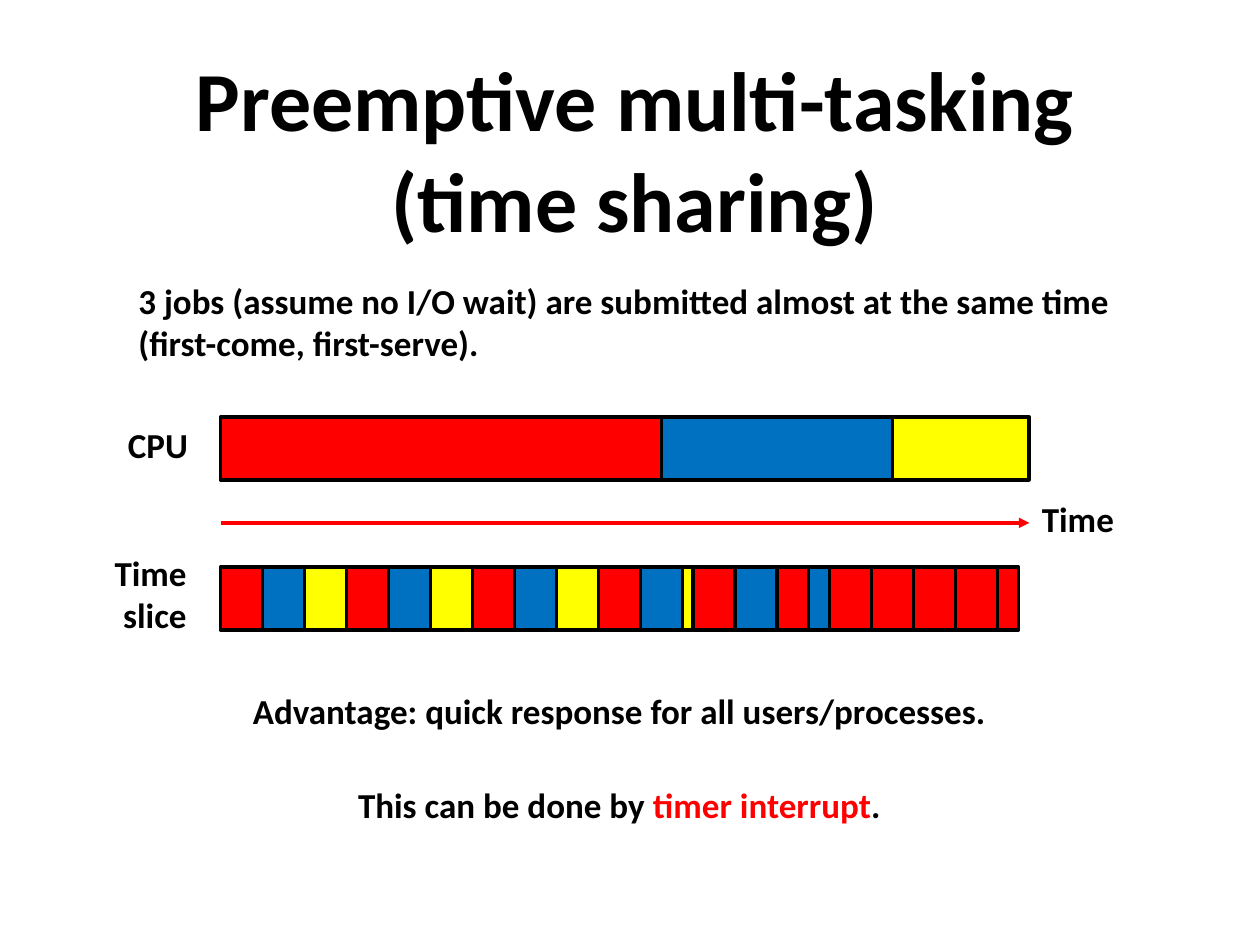
"""Build a slide comparing first-come scheduling with preemptive time sharing."""
from dataclasses import dataclass

from lxml import etree
from pptx import Presentation
from pptx.dml.color import RGBColor
from pptx.enum.shapes import MSO_CONNECTOR, MSO_SHAPE
from pptx.enum.text import MSO_AUTO_SIZE, PP_ALIGN
from pptx.oxml.ns import qn
from pptx.util import Inches, Pt

LEFT, CENTER, RIGHT = PP_ALIGN.LEFT, PP_ALIGN.CENTER, PP_ALIGN.RIGHT
RECTANGLE, STRAIGHT = MSO_SHAPE.RECTANGLE, MSO_CONNECTOR.STRAIGHT
FIT_SHAPE = MSO_AUTO_SIZE.SHAPE_TO_FIT_TEXT


@dataclass(frozen=True)
class Theme:
    font: str = "Calibri"
    title: Pt = Pt(48)
    body: Pt = Pt(20)
    line: Pt = Pt(2)
    black: RGBColor = RGBColor(0, 0, 0)
    red: RGBColor = RGBColor(255, 0, 0)
    blue: RGBColor = RGBColor(0, 112, 192)
    yellow: RGBColor = RGBColor(255, 255, 0)


theme = Theme()
presentation = Presentation()
presentation.slide_width, presentation.slide_height = Inches(10), Inches(7.5)
slide = presentation.slides.add_slide(presentation.slide_layouts[6])


def add_label(text, left, top, width, height, alignment=LEFT, size=theme.body):
    box = slide.shapes.add_textbox(Inches(left), Inches(top), Inches(width), Inches(height))
    frame = box.text_frame
    frame.word_wrap = True
    frame.auto_size = FIT_SHAPE
    frame.text = text
    paragraph = frame.paragraphs[0]
    paragraph.alignment = alignment
    for run in paragraph.runs:
        run.font.name, run.font.size, run.font.bold = theme.font, size, True
        run.font.color.rgb = theme.black
    return paragraph


def add_bar(top, jobs):
    for color, slices in jobs:
        for start, length in slices:
            shape = slide.shapes.add_shape(
                RECTANGLE, Inches(BAR_LEFT + start * UNIT), Inches(top),
                Inches(length * UNIT), Inches(0.5))
            shape.shadow.inherit = False
            shape.fill.solid()
            shape.fill.fore_color.rgb = color
            shape.line.color.rgb = theme.black
            shape.line.width = theme.line


BAR_LEFT = 1.75
UNIT = 1 / 12
QUANTUM = 4
CPU_TOP, SLICE_TOP, AXIS_TOP = 3.31, 4.5, 4.15

add_label("Preemptive multi-tasking\v(time sharing)", 0.58, 0.33, 8.92, 1.72, CENTER, theme.title)
add_label("3 jobs (assume no I/O wait) are submitted almost at the same time\v"
          "(first-come, first-serve).", 1, 2.17, 8.58, 0.77)

add_label("CPU", 0.67, CPU_TOP, 0.92, 0.44, RIGHT)
add_bar(CPU_TOP, [(theme.red, [(0, 42)]), (theme.blue, [(42, 22)]), (theme.yellow, [(64, 13)])])

axis = slide.shapes.add_connector(
    STRAIGHT, Inches(BAR_LEFT), Inches(AXIS_TOP), Inches(8.17), Inches(AXIS_TOP))
axis.line.color.rgb = theme.red
axis.line.width = theme.line
etree.SubElement(axis.line._get_or_add_ln(), qn("a:tailEnd"), type="triangle")
etree.SubElement(axis._element.spPr, qn("a:effectLst"))
add_label("Time", 8.17, 3.9, 0.92, 0.44)

red_starts = [0, 12, 24, 36, 45, 52, 58, 62, 66, 70]
blue_starts = [4, 16, 28, 40, 49]
yellow_starts = [8, 20, 32]
add_label("Time slice", 0.75, 4.33, 0.83, 0.77, RIGHT)
add_bar(SLICE_TOP, [
    (theme.red, [(start, QUANTUM) for start in red_starts] + [(74, 2)]),
    (theme.blue, [(start, QUANTUM) for start in blue_starts] + [(56, 2)]),
    (theme.yellow, [(start, QUANTUM) for start in yellow_starts] + [(44, 1)]),
])

add_label("Advantage: quick response for all users/processes.", 1.83, 5.42, 6.17, 0.44, CENTER)
closing = add_label("This can be done by ", 1.83, 6.17, 6.17, 0.44, CENTER)
for text, color in [("timer interrupt", theme.red), (".", theme.black)]:
    run = closing.add_run()
    run.text = text
    run.font.name, run.font.size, run.font.bold = theme.font, theme.body, True
    run.font.color.rgb = color

presentation.save("out.pptx")
